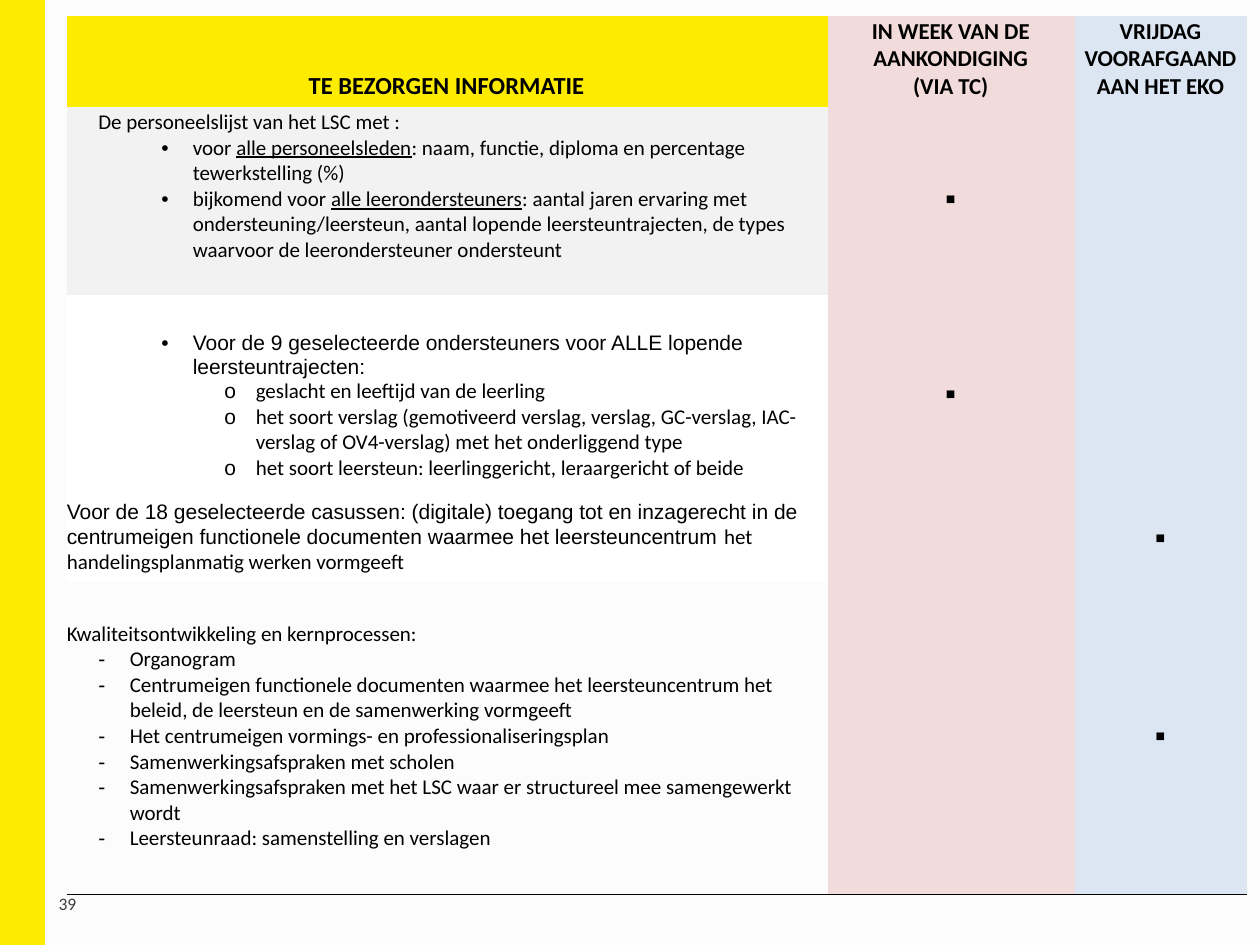
from dataclasses import dataclass

from lxml import etree
from pptx import Presentation
from pptx import util as u
from pptx.dml.color import RGBColor
from pptx.enum import shapes, text
from pptx.oxml.ns import qn


@dataclass(frozen=True)
class Theme:
    background: str = "FCFCFC"
    yellow: str = "FEEC00"
    pink: str = "F2DCDB"
    blue: str = "DCE6F2"
    grey: str = "F2F2F2"
    white: str = "FFFFFF"
    ink: str = "000000"
    page_ink: str = "3C3D3C"
    font: str = "Calibri"
    alt_font: str = "Arial"
    heading: float = 14
    subheading: float = 13
    body: float = 12
    page: float = 10
    mark: float = 9


THEME = Theme()
ARIAL = {"font": THEME.alt_font}
UNDERLINED = {"underline": True}

# Paragraph kinds: left margin, hanging indent (inches), bullet
KINDS = {
    "plain": (0, 0, None),
    "intro": (0.5, -0.25, None),
    "dash": (0.5, -0.25, "-"),
    "bullet": (1, -0.25, "•"),
    "sub": (1.5, -0.25, "o"),
}

HEADINGS = [
    (["TE BEZORGEN INFORMATIE"], THEME.yellow, THEME.heading),
    (["IN WEEK VAN DE AANKONDIGING", "(VIA TC)"], THEME.pink, THEME.subheading),
    (["VRIJDAG VOORAFGAAND", "AAN HET EKO"], THEME.blue, THEME.subheading),
]

# Each paragraph: kind, then runs of (words, format)
ROWS = [
    {"fill": THEME.grey, "marked": 1, "bottom": 0.25, "paragraphs": [
        ("intro", [("De personeelslijst van het LSC met :", {})]),
        ("bullet", [("voor ", {}), ("alle personeelsleden", UNDERLINED),
                    (": naam, functie, diploma en percentage tewerkstelling (%)", {})]),
        ("bullet", [("bijkomend voor ", {}), ("alle leerondersteuners", UNDERLINED),
                    (": aantal jaren ervaring met ondersteuning/leersteun, aantal lopende "
                     "leersteuntrajecten, de types waarvoor de leerondersteuner ondersteunt", {})]),
    ]},
    {"fill": THEME.white, "marked": 1, "top": 0.21, "paragraphs": [
        ("bullet", [("Voor de 9 geselecteerde ondersteuners voor ALLE lopende "
                     "leersteuntrajecten:", ARIAL)]),
        ("sub", [("geslacht en leeftijd van de leerling", {})]),
        ("sub", [("het soort verslag (gemotiveerd verslag, verslag, GC-verslag, "
                  "IAC-verslag of OV4-verslag) met het onderliggend type", {})]),
        ("sub", [("het soort leersteun: leerlinggericht, leraargericht of beide", {})]),
    ]},
    {"fill": THEME.white, "marked": 2, "paragraphs": [
        ("plain", [("Voor de 18 geselecteerde casussen: (digitale) toegang tot en inzagerecht "
                    "in de centrumeigen functionele documenten waarmee het "
                    "leersteuncentrum ", ARIAL),
                   ("het handelingsplanmatig werken vormgeeft", {})]),
    ]},
    {"fill": None, "marked": 2, "paragraphs": [
        ("plain", [("Kwaliteitsontwikkeling en kernprocessen:", {})]),
        *(("dash", [(item, {})]) for item in (
            "Organogram",
            "Centrumeigen functionele documenten waarmee het leersteuncentrum het beleid, "
            "de leersteun en de samenwerking vormgeeft",
            "Het centrumeigen vormings- en professionaliseringsplan",
            "Samenwerkingsafspraken met scholen",
            "Samenwerkingsafspraken met het LSC waar er structureel mee samengewerkt wordt",
            "Leersteunraad: samenstelling en verslagen",
        )),
    ]},
]
COLUMN_WIDTHS = [6.04, 1.96, 1.37]
ROW_HEIGHTS = [0.72, 1.49, 1.61, 0.66, 2.48]
PAGE_NUMBER = "39"


def add_run(paragraph, words, size=THEME.body, font=THEME.font, color=THEME.ink,
            bold=False, underline=False):
    run = paragraph.add_run()
    run.text = words
    run.font.size = u.Pt(size)
    run.font.name = font
    run.font.bold = bold
    run.font.underline = underline
    run.font.color.rgb = RGBColor.from_string(color)


def write(frame, paragraphs, align=text.PP_ALIGN.LEFT, **look):
    """Fill a text frame; a run's own format overrides the shared look."""
    for index, (kind, runs) in enumerate(paragraphs):
        paragraph = frame.paragraphs[0] if index == 0 else frame.add_paragraph()
        paragraph.alignment = align
        margin, indent, bullet = KINDS[kind]
        properties = paragraph._p.get_or_add_pPr()
        properties.set("marL", str(u.Inches(margin)))
        properties.set("indent", str(u.Inches(indent)))
        if bullet:
            etree.SubElement(properties, qn("a:buFont"), typeface=THEME.alt_font)
            etree.SubElement(properties, qn("a:buChar"), char=bullet)
        for words, own in runs:
            add_run(paragraph, words, **{**look, **own})


def style_cell(cell, fill, anchor=text.MSO_ANCHOR.MIDDLE, top=0.02, bottom=0.05, ruled=False):
    cell.margin_left, cell.margin_right = u.Inches(0), u.Inches(0.01)
    cell.margin_top, cell.margin_bottom = u.Inches(top), u.Inches(bottom)
    cell.vertical_anchor = anchor
    if fill:
        cell.fill.solid()
        cell.fill.fore_color.rgb = RGBColor.from_string(fill)
    else:
        cell.fill.background()
    properties = cell._tc.get_or_add_tcPr()
    for position, side in enumerate("LRTB"):
        border = etree.Element(qn(f"a:ln{side}"), w=str(u.Pt(0.75)))
        if ruled and side == "B":
            solid = etree.SubElement(border, qn("a:solidFill"))
            etree.SubElement(solid, qn("a:srgbClr"), val=THEME.ink)
        else:
            etree.SubElement(border, qn("a:noFill"))
        properties.insert(position, border)


def add_side_band(slide):
    band = slide.shapes.add_shape(shapes.MSO_SHAPE.RECTANGLE, 0, 0, u.Inches(0.35), u.Inches(7.5))
    band.shadow.inherit = False
    band.fill.solid()
    band.fill.fore_color.rgb = RGBColor.from_string(THEME.yellow)
    band.line.color.rgb = RGBColor.from_string(THEME.yellow)
    band.line.width = u.Pt(1.5)


def add_page_number(slide):
    box = slide.shapes.add_textbox(u.Inches(0.28), u.Inches(6.97), u.Inches(0.51), u.Inches(0.4))
    box.text_frame.word_wrap = True
    box.text_frame.vertical_anchor = text.MSO_ANCHOR.MIDDLE
    write(box.text_frame, [("plain", [(PAGE_NUMBER, {})])], align=text.PP_ALIGN.CENTER,
          size=THEME.page, color=THEME.page_ink)


def add_information_table(slide):
    table = slide.shapes.add_table(
        len(ROW_HEIGHTS), len(COLUMN_WIDTHS), u.Inches(0.53), u.Inches(0.13),
        u.Inches(sum(COLUMN_WIDTHS)), u.Inches(sum(ROW_HEIGHTS))).table
    table.first_row = table.horz_banding = False
    for column, width in zip(table.columns, COLUMN_WIDTHS):
        column.width = u.Inches(width)
    for row, height in zip(table.rows, ROW_HEIGHTS):
        row.height = u.Inches(height)

    for column, (lines, fill, size) in enumerate(HEADINGS):
        cell = table.cell(0, column)
        style_cell(cell, fill, text.MSO_ANCHOR.BOTTOM, top=0.01)
        write(cell.text_frame, [("plain", [(line, {})]) for line in lines],
              align=text.PP_ALIGN.CENTER, size=size, bold=True)

    for number, row in enumerate(ROWS, start=1):
        ruled = number == len(ROWS)
        information = table.cell(number, 0)
        style_cell(information, row["fill"], top=row.get("top", 0.02),
                   bottom=row.get("bottom", 0.05), ruled=ruled)
        write(information.text_frame, row["paragraphs"])
        for column, fill in enumerate((THEME.pink, THEME.blue), start=1):
            moment = table.cell(number, column)
            style_cell(moment, fill, ruled=ruled)
            if column == row["marked"]:
                write(moment.text_frame, [("plain", [("■", ARIAL)])],
                      align=text.PP_ALIGN.CENTER, size=THEME.mark)


def main():
    deck = Presentation()
    deck.slide_width, deck.slide_height = u.Inches(10), u.Inches(7.5)
    slide = deck.slides.add_slide(deck.slide_layouts[6])
    slide.background.fill.solid()
    slide.background.fill.fore_color.rgb = RGBColor.from_string(THEME.background)
    add_side_band(slide)
    add_page_number(slide)
    add_information_table(slide)
    deck.save("out.pptx")


if __name__ == "__main__":
    main()
